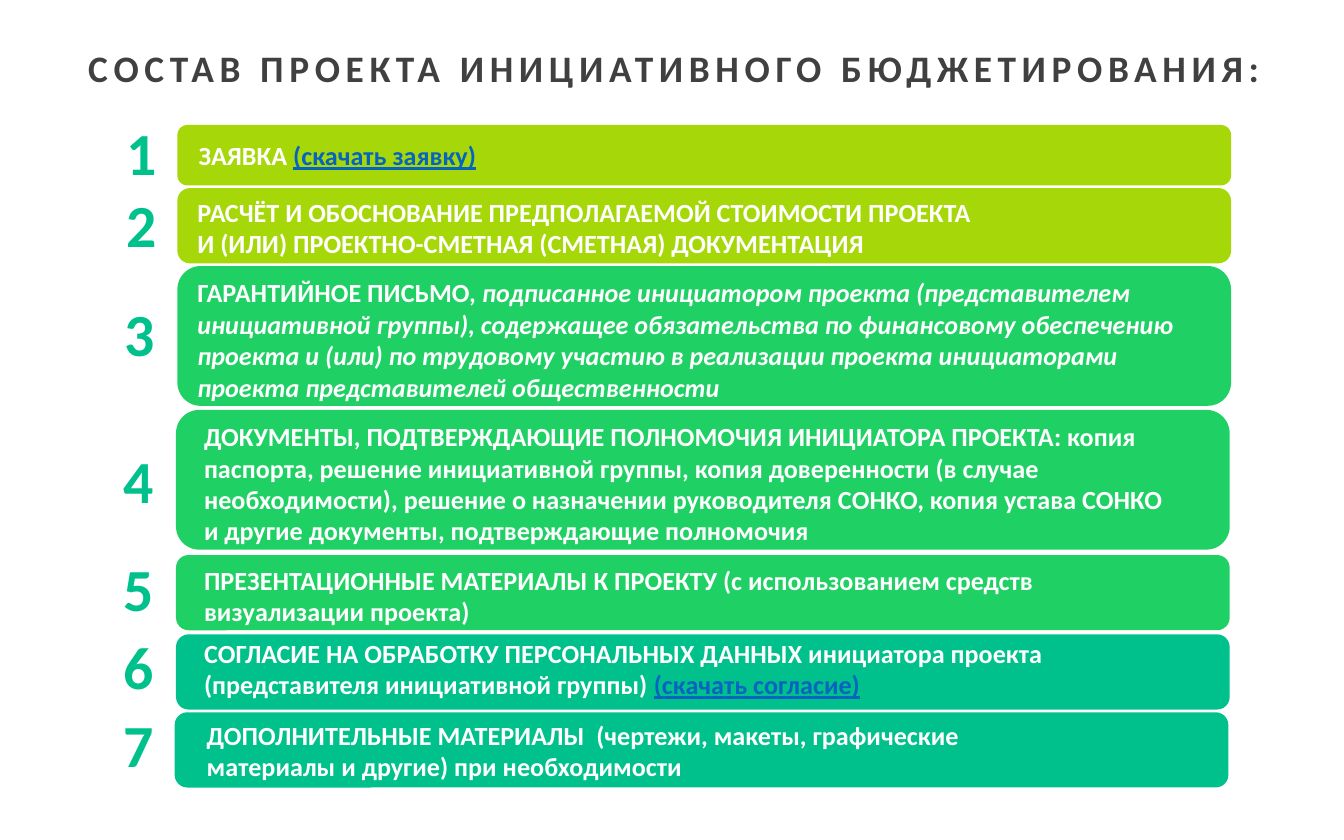
from pptx import Presentation
from pptx.dml.color import RGBColor
from pptx.enum import shapes, text
from pptx.util import Inches, Pt

FONT = "Calibri"
COLORS = {
    "title": "404040",
    "lime": "A6D708",
    "green": "1FD064",
    "teal": "00C18B",
    "white": "FFFFFF",
    "link": "0563C1",
}

BAR_W = 7.84
NUM_W, NUM_H = 0.43, 0.64

# Bar: left, top, height, colour. Number: left, top. Text: left, top, width, height.
# Each paragraph is a list of (words, style) runs.
ROWS = [
    ((1.32, 0.93, 0.45, "lime"), (0.84, 0.81), (1.38, 0.99, 3.2, 0.35),
     [[("ЗАЯВКА ", ""), ("(скачать заявку)", "link")]]),
    ((1.32, 1.4, 0.56, "lime"), (0.84, 1.35), (1.37, 1.41, 7.01, 0.59),
     [[("РАСЧЁТ И ОБОСНОВАНИЕ ПРЕДПОЛАГАЕМОЙ СТОИМОСТИ ПРОЕКТА", "")],
      [("И (ИЛИ) ПРОЕКТНО-СМЕТНАЯ (СМЕТНАЯ) ДОКУМЕНТАЦИЯ", "")]]),
    ((1.32, 1.98, 1.04, "green"), (0.83, 2.16), (1.37, 2.01, 7.47, 1.08),
     [[("ГАРАНТИЙНОЕ ПИСЬМО, ", ""),
       ("подписанное инициатором проекта (представителем инициативной "
        "группы), содержащее обязательства по финансовому обеспечению "
        "проекта и (или) по трудовому участию в реализации проекта "
        "инициаторами проекта представителей общественности", "italic")]]),
    ((1.31, 3.05, 1.04, "green"), (0.82, 3.25), (1.42, 3.08, 7.56, 1.08),
     [[("ДОКУМЕНТЫ, ПОДТВЕРЖДАЮЩИЕ ПОЛНОМОЧИЯ ИНИЦИАТОРА ПРОЕКТА: копия "
        "паспорта, решение инициативной группы, копия доверенности (в случае "
        "необходимости), решение о назначении руководителя СОНКО, копия "
        "устава СОНКО", "")],
      [("и другие документы, подтверждающие полномочия", "")]]),
    ((1.31, 4.13, 0.56, "green"), (0.82, 4.06), (1.42, 4.15, 7.13, 0.59),
     [[("ПРЕЗЕНТАЦИОННЫЕ МАТЕРИАЛЫ К ПРОЕКТУ (с использованием средств "
        "визуализации проекта)", "")]]),
    ((1.31, 4.72, 0.56, "teal"), (0.82, 4.64), (1.42, 4.69, 6.46, 0.59),
     [[("СОГЛАСИЕ НА ОБРАБОТКУ ПЕРСОНАЛЬНЫХ ДАННЫХ инициатора проекта "
        "(представителя инициативной группы) ", ""),
       ("(скачать согласие)", "link")]]),
    ((1.3, 5.3, 0.56, "teal"), (0.82, 5.22), (1.44, 5.3, 6.3, 0.59),
     [[("ДОПОЛНИТЕЛЬНЫЕ МАТЕРИАЛЫ  (чертежи, макеты, графические материалы "
        "и другие) при необходимости", "")]]),
]


def rgb(name):
    return RGBColor.from_string(COLORS[name])


def add_text(parent, area, paras, size, color):
    """Add a bold text box; paras is a list of lists of (words, style)."""
    box = parent.shapes.add_textbox(*map(Inches, area))
    frame = box.text_frame
    frame.word_wrap = True
    for i, runs in enumerate(paras):
        para = frame.add_paragraph() if i else frame.paragraphs[0]
        font = para.font
        font.name, font.size, font.bold = FONT, Pt(size), True
        font.color.rgb = rgb(color)
        for words, style in runs:
            run = para.add_run()
            run.text = words
            if style == "italic":
                run.font.italic = True
            elif style == "link":
                run.font.underline = True
                run.font.color.rgb = rgb("link")
    return frame


def add_title(slide, words):
    frame = add_text(slide, (0.03, 0.16, 9.97, 0.69), [[(words, "")]], 20, "title")
    frame.vertical_anchor = text.MSO_ANCHOR.MIDDLE
    para = frame.paragraphs[0]
    para.alignment = text.PP_ALIGN.CENTER
    para.runs[0].font._element.set("spc", "300")


def add_bar(parent, left, top, height, color):
    bar = parent.shapes.add_shape(
        shapes.MSO_SHAPE.ROUNDED_RECTANGLE,
        *map(Inches, (left, top, BAR_W, height)))
    bar.shadow.inherit = False
    bar.fill.solid()
    bar.fill.fore_color.rgb = rgb(color)
    bar.line.fill.background()


def add_row(slide, number, bar, spot, area, paras):
    group = slide.shapes.add_group_shape()
    add_bar(group, *bar)
    add_text(group, (*spot, NUM_W, NUM_H), [[(str(number), "")]], 32, "teal")
    add_text(group, area, paras, 14, "white")


def main():
    deck = Presentation()
    deck.slide_width, deck.slide_height = Inches(10), Inches(6.25)
    slide = deck.slides.add_slide(deck.slide_layouts[6])
    add_title(slide, "СОСТАВ ПРОЕКТА ИНИЦИАТИВНОГО БЮДЖЕТИРОВАНИЯ:")
    for number, row in enumerate(ROWS, 1):
        add_row(slide, number, *row)
    deck.save("out.pptx")


if __name__ == "__main__":
    main()
